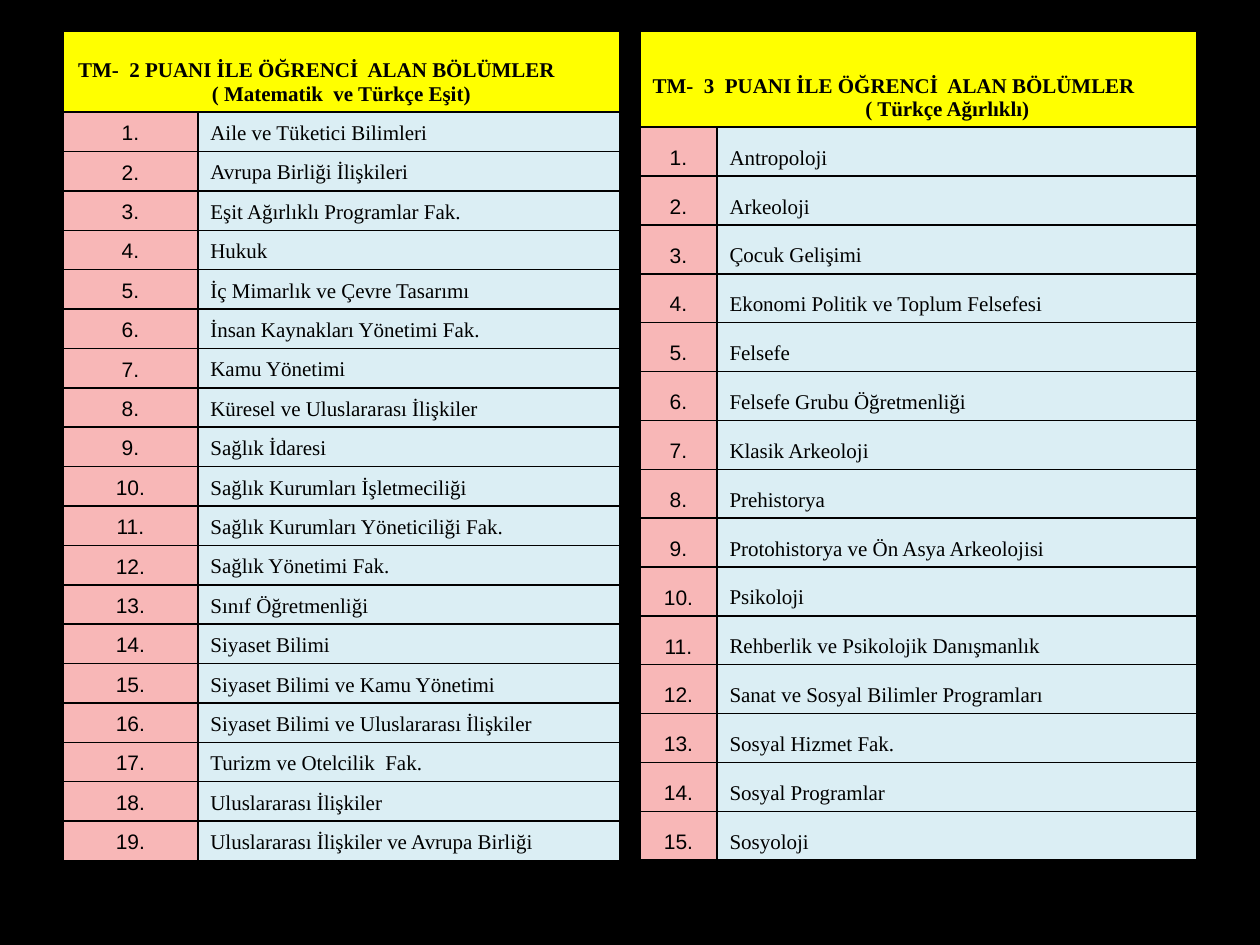
from dataclasses import dataclass

from lxml import etree
from pptx import Presentation
from pptx.dml.color import RGBColor
from pptx.enum.text import MSO_ANCHOR, PP_ALIGN
from pptx.oxml.ns import qn
from pptx.util import Inches, Pt

LEFT, CENTER = PP_ALIGN.LEFT, PP_ALIGN.CENTER
BOTTOM = MSO_ANCHOR.BOTTOM


@dataclass(frozen=True)
class Theme:
    background: str = "000000"
    ink: str = "000000"
    heading: str = "FFFF00"
    number: str = "F8B7B7"
    department: str = "DBEEF4"
    serif: str = "Times New Roman"
    sans: str = "Arial"
    size: int = 12
    border: int = 1


THEME = Theme()
TOP, WIDTH, HEIGHT = 0.25, 4.42, 6.58

EQUAL_WEIGHT = [
    "Aile ve Tüketici Bilimleri",
    "Avrupa Birliği İlişkileri",
    "Eşit Ağırlıklı Programlar Fak.",
    "Hukuk",
    "İç Mimarlık ve Çevre Tasarımı",
    "İnsan Kaynakları Yönetimi Fak.",
    "Kamu Yönetimi",
    "Küresel ve Uluslararası İlişkiler",
    "Sağlık İdaresi",
    "Sağlık Kurumları İşletmeciliği",
    "Sağlık Kurumları Yöneticiliği Fak.",
    "Sağlık Yönetimi Fak.",
    "Sınıf Öğretmenliği",
    "Siyaset Bilimi",
    "Siyaset Bilimi ve Kamu Yönetimi",
    "Siyaset Bilimi ve Uluslararası İlişkiler",
    "Turizm ve Otelcilik  Fak.",
    "Uluslararası İlişkiler",
    "Uluslararası İlişkiler ve Avrupa Birliği",
]
TURKISH_WEIGHT = [
    "Antropoloji",
    "Arkeoloji",
    "Çocuk Gelişimi",
    "Ekonomi Politik ve Toplum Felsefesi",
    "Felsefe",
    "Felsefe Grubu Öğretmenliği",
    "Klasik Arkeoloji",
    "Prehistorya",
    "Protohistorya ve Ön Asya Arkeolojisi",
    "Psikoloji",
    "Rehberlik ve Psikolojik Danışmanlık",
    "Sanat ve Sosyal Bilimler Programları",
    "Sosyal Hizmet Fak.",
    "Sosyal Programlar",
    "Sosyoloji",
]


def write(p, text, font=THEME.serif, bold=False, align=LEFT, indent=0):
    p.alignment = align
    if indent:
        p._p.get_or_add_pPr().set("marL", str(Inches(indent)))
    r = p.add_run()
    r.text = text
    r.font.name = font
    r.font.size = Pt(THEME.size)
    r.font.bold = bold
    r.font.color.rgb = RGBColor.from_string(THEME.ink)


def style_cell(cell, fill):
    cell.vertical_anchor = BOTTOM
    tcPr = cell._tc.get_or_add_tcPr()
    # Borders come before the fill in the cell properties
    for side in ("a:lnL", "a:lnR", "a:lnT", "a:lnB"):
        line = etree.SubElement(tcPr, qn(side), w=str(Pt(THEME.border)))
        solid = etree.SubElement(line, qn("a:solidFill"))
        etree.SubElement(solid, qn("a:srgbClr"), val=THEME.ink)
    cell.fill.solid()
    cell.fill.fore_color.rgb = RGBColor.from_string(fill)


def add_department_table(s, left, number_width, heading_height, title,
                         subtitle, departments, title_indent=0,
                         subtitle_indent=0):
    count = len(departments)
    table = s.shapes.add_table(count + 1, 2, Inches(left), Inches(TOP),
                               Inches(WIDTH), Inches(HEIGHT)).table
    table.first_row = table.horz_banding = False
    table.columns[0].width = Inches(number_width)
    table.columns[1].width = Inches(WIDTH - number_width)
    table.rows[0].height = Inches(heading_height)

    # Heading across both columns
    heading = table.cell(0, 0)
    heading.merge(table.cell(0, 1))
    for col in range(2):
        style_cell(table.cell(0, col), THEME.heading)
    tf = heading.text_frame
    write(tf.paragraphs[0], title, bold=True, indent=title_indent)
    write(tf.add_paragraph(), subtitle, bold=True, align=CENTER,
          indent=subtitle_indent)

    # Numbered departments
    for row, name in enumerate(departments, 1):
        table.rows[row].height = Inches((HEIGHT - heading_height) / count)
        number, department = table.cell(row, 0), table.cell(row, 1)
        style_cell(number, THEME.number)
        style_cell(department, THEME.department)
        write(number.text_frame.paragraphs[0], f"{row}.", font=THEME.sans,
              align=CENTER)
        write(department.text_frame.paragraphs[0], name)


def main():
    prs = Presentation()
    prs.slide_width, prs.slide_height = Inches(10), Inches(7.5)
    s = prs.slides.add_slide(prs.slide_layouts[6])
    s.background.fill.solid()
    s.background.fill.fore_color.rgb = RGBColor.from_string(THEME.background)

    add_department_table(s, 0.5, 1.07, 0.64,
                         "TM-  2 PUANI İLE ÖĞRENCİ  ALAN BÖLÜMLER",
                         "( Matematik  ve Türkçe Eşit)",
                         EQUAL_WEIGHT, title_indent=0.02)
    add_department_table(s, 5.08, 0.61, 0.76,
                         "TM-  3  PUANI İLE ÖĞRENCİ  ALAN BÖLÜMLER",
                         "( Türkçe Ağırlıklı)",
                         TURKISH_WEIGHT, subtitle_indent=0.46)
    prs.save("out.pptx")


if __name__ == "__main__":
    main()
